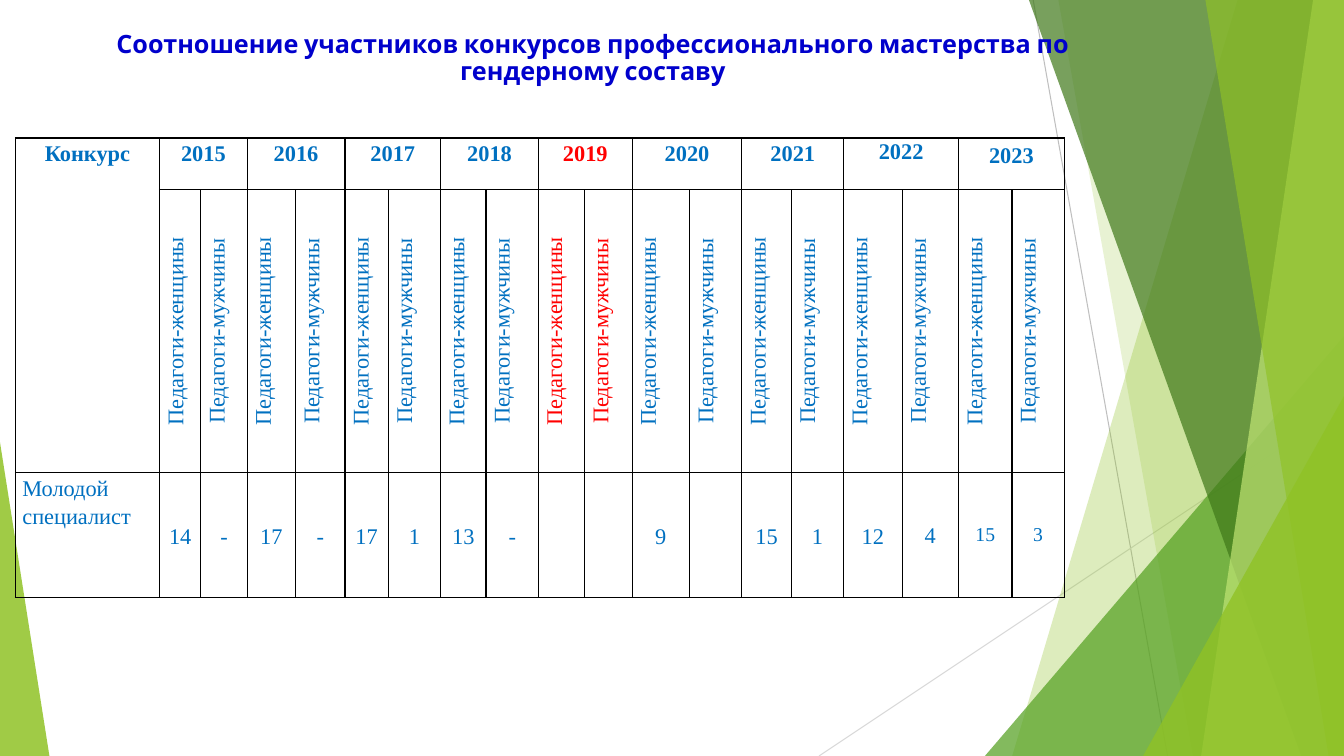
from lxml.etree import SubElement
from pptx import Presentation
from pptx.dml.color import RGBColor
from pptx.enum.shapes import MSO_CONNECTOR as CONN, MSO_SHAPE as SHAPE
from pptx.enum.text import MSO_ANCHOR as ANCHOR, MSO_AUTO_SIZE as AUTO, PP_ALIGN as ALIGN
from pptx.oxml import parse_xml
from pptx.oxml.ns import nsdecls, qn
from pptx.util import Pt

C = {"title": "0000CC", "text": "0070C0", "accent": "FF0000", "border": "000000",
     "lime": "90C226", "green": "54A021", "dark": "3F7819", "pale": "C0E474",
     "gray": "BFBFBF", "light_gray": "D9D9D9"}
W, H = 960, 540
SERIF = "Times New Roman"

TITLE = "Соотношение участников конкурсов профессионального мастерства по гендерному составу"
CONTEST, CONTEST_NAME = "Конкурс", "Молодой специалист"
GROUPS = ("Педагоги-женщины", "Педагоги-мужчины")
RESULTS = [("2015", "14", "-"), ("2016", "17", "-"), ("2017", "17", "1"),
           ("2018", "13", "-"), ("2019", "", ""), ("2020", "9", ""),
           ("2021", "15", "1"), ("2022", "12", "4"), ("2023", "15", "3")]
ACCENT_YEAR = "2019"
COLS = [1.43, .41, .46, .48, .49, .43, .52, .45, .52, .46,
        .47, .57, .52, .49, .52, .58, .56, .53, .52]
ROWS = [37, 202, 89]

LINES = [(738, 0, 834, H, "gray"), (W, 290, 585, H, "light_gray")]
BANDS = [(884, 723, "lime", 30), (756, 852, "lime", 20)]
FRONT_BANDS = [(735, 929.5, "dark", 70), (938, 858, "pale", 70), (861, 949, "lime", 65)]
MIDDLE_TRIANGLE = (703.5, 240, 256.5, 300, 1, "green", 72)
FRONT_TRIANGLES = [(816.5, 283, 143.5, 257, 1, "lime", 80), (0, 316, 35.3, 224, 0, "lime", 85)]


def rgb(name):
    return RGBColor.from_string(C[name])


def paint(sp, color, opacity):
    sp.shadow.inherit = False
    sp.line.fill.background()
    sp.fill.solid()
    sp.fill.fore_color.rgb = rgb(color)
    clr = next(sp.element.spPr.iter(qn("a:srgbClr")))
    SubElement(clr, qn("a:alpha")).set("val", str(opacity * 1000))


def add_line(s, x1, y1, x2, y2, color):
    ln = s.shapes.add_connector(CONN.STRAIGHT, Pt(x1), Pt(y1), Pt(x2), Pt(y2))
    ln.line.color.rgb = rgb(color)
    ln.line.width = Pt(0.75)
    SubElement(ln.element.spPr, qn("a:effectLst"))


def add_band(s, top, bottom, color, opacity):
    fb = s.shapes.build_freeform(Pt(top), 0)
    fb.add_line_segments([(Pt(W), 0), (Pt(W), Pt(H)), (Pt(bottom), Pt(H))], close=True)
    paint(fb.convert_to_shape(), color, opacity)


def add_triangle(s, x, y, w, h, apex, color, opacity):
    sp = s.shapes.add_shape(SHAPE.ISOSCELES_TRIANGLE, Pt(x), Pt(y), Pt(w), Pt(h))
    sp.adjustments[0] = apex
    paint(sp, color, opacity)


def add_run(p, text, size, font, color, bold):
    r = p.add_run()
    r.text = text
    r.font.size, r.font.name, r.font.bold = Pt(size), font, bold
    r.font.color.rgb = rgb(color)


def style_cell(cell):
    cell.fill.background()
    cell.margin_left = cell.margin_right = Pt(5)
    cell.margin_top = cell.margin_bottom = 0
    tc_pr = cell._tc.get_or_add_tcPr()
    for i, side in enumerate("LRTB"):
        tc_pr.insert(i, parse_xml(
            f'<a:ln{side} {nsdecls("a")} w="12700"><a:solidFill>'
            f'<a:srgbClr val="{C["border"]}"/></a:solidFill></a:ln{side}>'))


def write(cell, text, color="text", size=16, bold=False, align=ALIGN.CENTER, spacing=1.15, after=0):
    if not text:
        return
    p = cell.text_frame.paragraphs[0]
    p.alignment, p.line_spacing, p.space_after = align, spacing, Pt(after)
    add_run(p, text, size, SERIF, color, bold)


def add_results(s):
    frame = s.shapes.add_table(len(ROWS), len(COLS), Pt(11), Pt(98.6),
                               Pt(sum(COLS) * 72), Pt(sum(ROWS)))
    t = frame.table
    t.first_row = t.horz_banding = False
    for col, width in zip(t.columns, COLS):
        col.width = Pt(width * 72)
    for row, height in zip(t.rows, ROWS):
        row.height = Pt(height)
    for cell in t.iter_cells():
        style_cell(cell)

    t.cell(0, 0).merge(t.cell(1, 0))
    write(t.cell(0, 0), CONTEST, bold=True)
    write(t.cell(2, 0), CONTEST_NAME, align=ALIGN.LEFT)
    for i, (year, *counts) in enumerate(RESULTS):
        first = 1 + 2 * i
        color = "accent" if year == ACCENT_YEAR else "text"
        last = year == "2023"
        spaced = {"spacing": 1.07, "after": 8}
        head = t.cell(0, first)
        head.merge(t.cell(0, first + 1))
        if last:
            head.margin_top = head.margin_bottom = Pt(3.6)
        write(head, year, color, bold=True,
              **(spaced if year == "2022" else {"spacing": 1 if last else 1.15}))
        for j, (group, count) in enumerate(zip(GROUPS, counts)):
            label, value = t.cell(1, first + j), t.cell(2, first + j)
            label._tc.get_or_add_tcPr().set("vert", "vert270")
            write(label, group, color)
            value.vertical_anchor = ANCHOR.MIDDLE
            if last:
                write(value, count, size=14, spacing=1)
            else:
                write(value, count, **(spaced if (year, j) == ("2022", 1) else {}))


def add_title(s):
    sp = s.shapes.title
    sp.element.getparent().append(sp.element)
    sp.left, sp.top, sp.width, sp.height = Pt(20), Pt(18.7), Pt(807), Pt(505)
    tf = sp.text_frame
    tf.word_wrap, tf.auto_size, tf.vertical_anchor = True, AUTO.NONE, ANCHOR.TOP
    p = tf.paragraphs[0]
    p.alignment, p.line_spacing = ALIGN.CENTER, 0.9
    add_run(p, TITLE, 18, "Cabin", "title", True)


def main():
    prs = Presentation()
    prs.slide_width, prs.slide_height = Pt(W), Pt(H)
    s = prs.slides.add_slide(prs.slide_layouts[5])
    for line in LINES:
        add_line(s, *line)
    for band in BANDS:
        add_band(s, *band)
    add_triangle(s, *MIDDLE_TRIANGLE)
    for band in FRONT_BANDS:
        add_band(s, *band)
    for triangle in FRONT_TRIANGLES:
        add_triangle(s, *triangle)
    add_title(s)
    add_results(s)
    prs.save("out.pptx")


if __name__ == "__main__":
    main()
